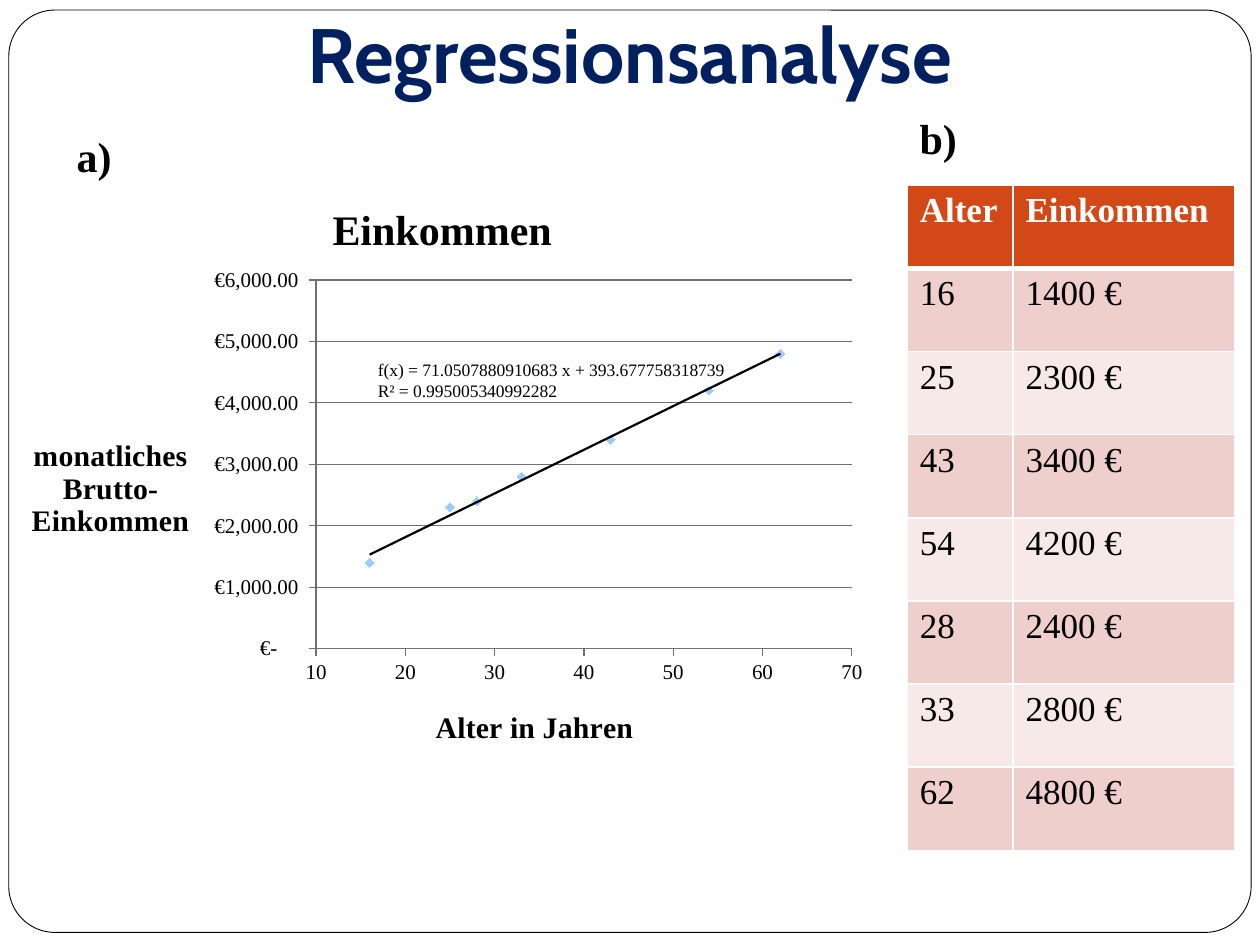
"""Build the slide "Regressionsanalyse" with a scatter chart, its trend line and the data table."""
from dataclasses import dataclass

from lxml.etree import SubElement
from pptx import Presentation
from pptx.chart.data import XyChartData
from pptx.dml.color import RGBColor
from pptx.enum.chart import XL_CHART_TYPE, XL_MARKER_STYLE, XL_TICK_MARK
from pptx.enum.shapes import MSO_SHAPE
from pptx.enum.text import PP_ALIGN
from pptx.oxml import parse_xml
from pptx.oxml.ns import nsdecls, qn
from pptx.util import Inches, Pt


@dataclass(frozen=True)
class Theme:
    heading_font: str = "Cabin"
    body_font: str = "Times New Roman"
    black: RGBColor = RGBColor(0, 0, 0)
    white: RGBColor = RGBColor(255, 255, 255)
    navy: RGBColor = RGBColor.from_string("002060")
    grid: RGBColor = RGBColor.from_string("707070")
    marker: RGBColor = RGBColor.from_string("99CCFF")
    header: RGBColor = RGBColor.from_string("D34817")
    bands: tuple = (RGBColor.from_string("EFCFCC"), RGBColor.from_string("F7E9E8"))
    heading_size: int = 44
    label_size: int = 24
    table_size: int = 20
    axis_title_size: int = 17
    tick_size: int = 12
    chart_size: int = 10


theme = Theme()


def add_span(para, text, size, color, bold=False, font=theme.body_font):
    span = para.add_run()
    span.text = text
    span.font.name = font
    span.font.size = Pt(size)
    span.font.bold = bold
    span.font.color.rgb = color


def set_layout(parent, position, **values):
    for old in parent.findall(qn("c:layout")):
        parent.remove(old)
    layout = parse_xml(f"<c:layout {nsdecls('c')}/>")
    manual = SubElement(layout, qn("c:manualLayout"))
    for name, value in values.items():
        SubElement(manual, qn(f"c:{name}")).set("val", str(value))
    parent.insert(position, layout)


data = [(16, 1400), (25, 2300), (43, 3400), (54, 4200), (28, 2400), (33, 2800), (62, 4800)]

deck = Presentation()
deck.slide_width = Inches(10)
deck.slide_height = Inches(7.5)
page = deck.slides.add_slide(deck.slide_layouts[6])

frame = page.shapes.add_shape(
    MSO_SHAPE.ROUNDED_RECTANGLE, Inches(0.07), Inches(0.08), Inches(9.86), Inches(7.32))
frame.adjustments[0] = 0.05
frame.shadow.inherit = False
frame.fill.solid()
frame.fill.fore_color.rgb = theme.white
frame.line.color.rgb = theme.black
frame.line.width = Pt(0.5)

rows = [("Alter", "Einkommen")] + [(str(age), f"{income} €") for age, income in data]
table = page.shapes.add_table(
    len(rows), 2, Inches(7.2), Inches(1.47), Inches(2.6), Inches(5.28)).table
table.columns[0].width = Inches(0.84)
table.columns[1].width = Inches(1.76)
for row_index, row in enumerate(rows):
    is_header = row_index == 0
    for column_index, text in enumerate(row):
        cell = table.cell(row_index, column_index)
        cell.fill.solid()
        cell.fill.fore_color.rgb = theme.header if is_header else theme.bands[(row_index - 1) % 2]
        add_span(cell.text_frame.paragraphs[0], text, theme.table_size,
                 theme.white if is_header else theme.black, is_header)
        widths = {"lnL": 1, "lnR": 1, "lnT": 3 if row_index == 1 else 1, "lnB": 3 if is_header else 1}
        properties = cell._tc.get_or_add_tcPr()
        for position, (side, width) in enumerate(widths.items()):
            properties.insert(position, parse_xml(
                f'<a:{side} {nsdecls("a")} w="{Pt(width)}"><a:solidFill>'
                f'<a:srgbClr val="{theme.white}"/></a:solidFill></a:{side}>'))

chart_data = XyChartData()
points = chart_data.add_series("Einkommen")
for age, income in data:
    points.add_data_point(age, income)
chart = page.shapes.add_chart(
    XL_CHART_TYPE.XY_SCATTER, Inches(0), Inches(1.31), Inches(6.97), Inches(4.8), chart_data).chart
chart.has_legend = False
chart.font.name = theme.body_font
chart.font.size = Pt(theme.chart_size)
chart.font.color.rgb = theme.black
plot = chart.plots[0]
plot.vary_by_categories = False

age_axis, income_axis = chart.category_axis, chart.value_axis
scales = [(age_axis, 10, 70, 10), (income_axis, 0, 6000, 1000)]
for axis, low, high, step in scales:
    axis.minimum_scale = low
    axis.maximum_scale = high
    axis.major_unit = step
    axis.major_tick_mark = XL_TICK_MARK.OUTSIDE
    axis.minor_tick_mark = XL_TICK_MARK.NONE
    axis.tick_labels.font.size = Pt(theme.tick_size)
    axis.format.line.color.rgb = theme.grid
    axis.format.line.width = Pt(0.75)
age_axis.has_major_gridlines = False
income_axis.has_major_gridlines = True
income_axis.major_gridlines.format.line.color.rgb = theme.grid
income_axis.major_gridlines.format.line.width = Pt(0.75)
income_axis.tick_labels.number_format = '_("€"* #,##0.00_);_("€"* \\(#,##0.00\\);_("€"* "-"??_);_(@_)'
income_axis.tick_labels.number_format_is_linked = False

titles = [
    (chart.chart_title, "Einkommen", theme.label_size, 0.37, 0.05),
    (age_axis.axis_title, "Alter in Jahren", theme.axis_title_size, 0.49, 0.89),
    (income_axis.axis_title, "monatliches Brutto-Einkommen", theme.axis_title_size, 0.03, 0.44),
]
for title, text, size, left, top in titles:
    add_span(title.text_frame.paragraphs[0], text, size, theme.black, True)
    title.text_frame._txBody.bodyPr.set("rot", "0")
    title.text_frame._txBody.bodyPr.set("vert", "horz")
    set_layout(title._element, 1, xMode="edge", yMode="edge", x=left, y=top)
set_layout(chart._chartSpace.chart.plotArea, 0, layoutTarget="inner",
           xMode="edge", yMode="edge", x=0.36, y=0.19, w=0.61, h=0.61)

series = plot.series[0]
series.smooth = False
series.format.line.fill.background()
series.marker.style = XL_MARKER_STYLE.DIAMOND
series.marker.size = 5
series.marker.format.fill.solid()
series.marker.format.fill.fore_color.rgb = theme.marker
series.marker.format.line.color.rgb = theme.marker
trend = parse_xml(
    f'<c:trendline {nsdecls("c", "a")}><c:spPr><a:ln w="{Pt(1.25)}"><a:solidFill>'
    f'<a:srgbClr val="{theme.black}"/></a:solidFill></a:ln></c:spPr>'
    '<c:trendlineType val="linear"/><c:dispRSqr val="0"/><c:dispEq val="0"/></c:trendline>')
series._element.find(qn("c:xVal")).addprevious(trend)

heading_style = (theme.heading_size, theme.navy, True, theme.heading_font)
label_style = (theme.label_size, theme.black, True)
formula_style = (theme.chart_size, theme.black)
formula = ["f(x) = 71.0507880910683 x + 393.677758318739", "R² = 0.995005340992282"]
labels = [
    (["Regressionsanalyse"], 1.14, 0, 7.72, 0.84, heading_style, PP_ALIGN.CENTER),
    (["a)"], 0.51, 0.99, 1.1, 0.5, label_style, PP_ALIGN.LEFT),
    (["b)"], 7.2, 0.84, 1.1, 0.5, label_style, PP_ALIGN.LEFT),
    (formula, 2.9, 2.8, 3.1, 0.42, formula_style, PP_ALIGN.LEFT),
]
for lines, left, top, width, height, style, alignment in labels:
    box = page.shapes.add_textbox(Inches(left), Inches(top), Inches(width), Inches(height))
    box.text_frame.word_wrap = True
    for index, line in enumerate(lines):
        para = box.text_frame.add_paragraph() if index else box.text_frame.paragraphs[0]
        para.alignment = alignment
        add_span(para, line, *style)

deck.save("out.pptx")
